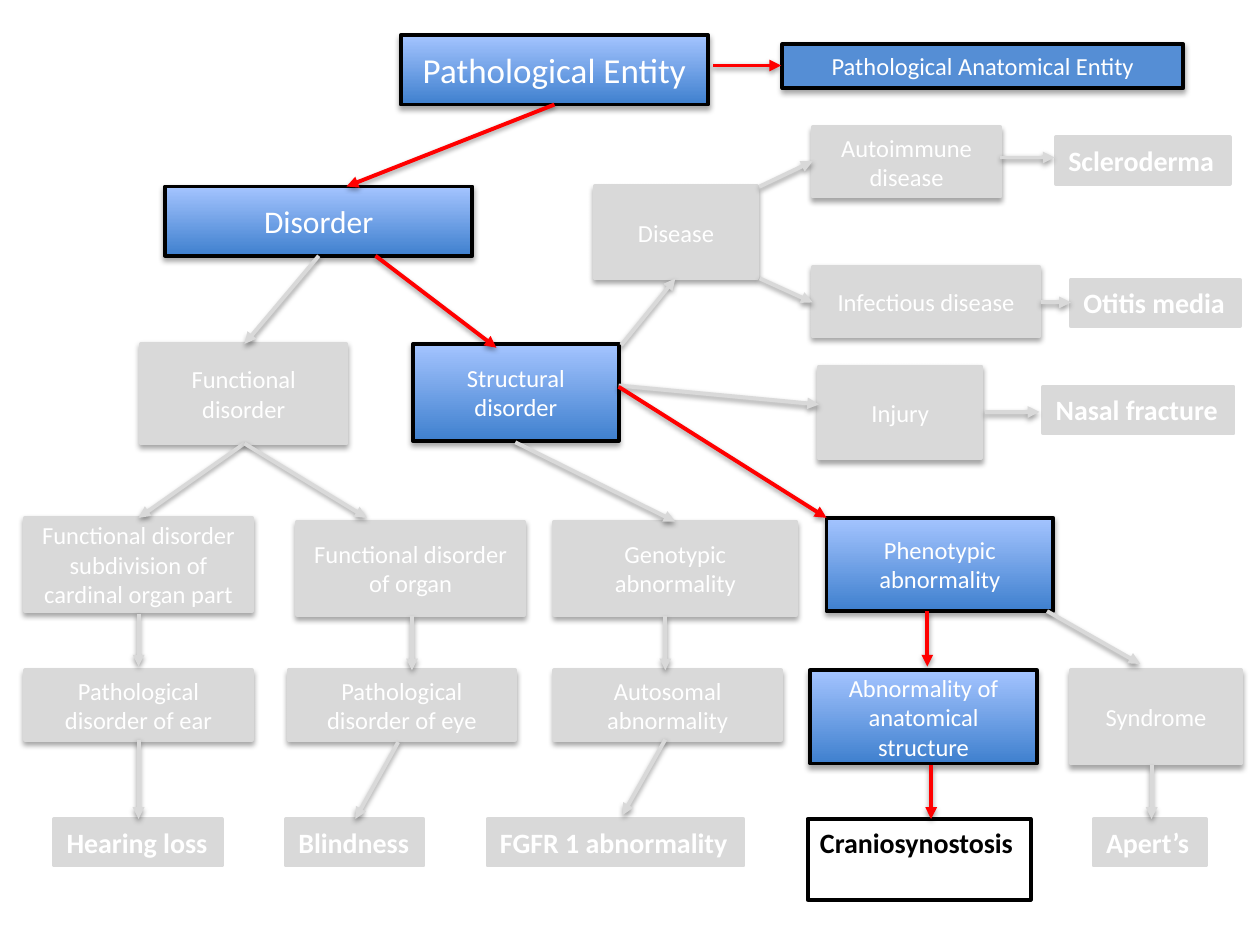
from dataclasses import dataclass

from lxml import etree
from pptx import Presentation
from pptx.dml.color import RGBColor
from pptx.enum.shapes import MSO_CONNECTOR, MSO_SHAPE
from pptx.enum.text import MSO_ANCHOR, MSO_AUTO_SIZE, PP_ALIGN
from pptx.oxml.ns import qn
from pptx.util import Inches, Pt

RECTANGLE = MSO_SHAPE.RECTANGLE
STRAIGHT = MSO_CONNECTOR.STRAIGHT
MIDDLE, TOP = MSO_ANCHOR.MIDDLE, MSO_ANCHOR.TOP
CENTER, LEFT = PP_ALIGN.CENTER, PP_ALIGN.LEFT
FIT_SHAPE, FIXED = MSO_AUTO_SIZE.SHAPE_TO_FIT_TEXT, MSO_AUTO_SIZE.NONE


@dataclass(frozen=True)
class Theme:
    font: str = "Calibri"
    white: RGBColor = RGBColor(0xFF, 0xFF, 0xFF)
    black: RGBColor = RGBColor(0, 0, 0)
    gray: RGBColor = RGBColor(0xD9, 0xD9, 0xD9)
    red: RGBColor = RGBColor(0xFF, 0, 0)
    blue: RGBColor = RGBColor(0x55, 0x8E, 0xD5)
    deep_blue: RGBColor = RGBColor(0x3F, 0x80, 0xCE)
    pale_blue: RGBColor = RGBColor(0xA4, 0xC4, 0xFF)
    root_size: int = 20
    branch_size: int = 18
    label_size: int = 16
    node_size: int = 14
    stroke: float = 2.25


theme = Theme()
deck = Presentation()
deck.slide_width, deck.slide_height = Inches(10), Inches(7.5)
page = deck.slides.add_slide(deck.slide_layouts[6])


def add_shadow(properties, distance, opacity):
    effects = properties.find(qn("a:effectLst"))
    if effects is None:
        effects = etree.SubElement(properties, qn("a:effectLst"))
    shadow = etree.SubElement(effects, qn("a:outerShdw"), blurRad=str(Pt(3.1)),
                              dist=str(Pt(distance)), dir="5400000", rotWithShape="0")
    color = etree.SubElement(shadow, qn("a:srgbClr"), val=str(theme.black))
    etree.SubElement(color, qn("a:alpha"), val=str(opacity * 1000))


def add_box(text, place, fill=theme.gray, gradient=False, outline=theme.gray,
            size=theme.node_size, color=theme.white, label=False, fit=FIXED):
    box = page.shapes.add_shape(RECTANGLE, *(Inches(value) for value in place))
    if gradient:
        box.fill.gradient()
        box.fill.gradient_angle = 90
        for stop, shade in zip(box.fill.gradient_stops, (theme.deep_blue, theme.pale_blue)):
            stop.color.rgb = shade
    elif fill is None:
        box.fill.background()
    else:
        box.fill.solid()
        box.fill.fore_color.rgb = fill
    box.line.color.rgb = outline
    box.line.width = Pt(theme.stroke)
    box.shadow.inherit = False
    if not label:
        add_shadow(box._element.spPr, 1.8, 35)
    frame = box.text_frame
    frame.word_wrap = fit == FIXED
    frame.auto_size = fit
    frame.vertical_anchor = TOP if label else MIDDLE
    para = frame.paragraphs[0]
    para.alignment = LEFT if label else CENTER
    span = para.add_run()
    span.text = text
    span.font.name = theme.font
    span.font.size = Pt(size)
    span.font.bold = label
    span.font.color.rgb = color


highlighted_nodes = [
    ("Pathological Entity", (3.18, 0.28, 2.44, 0.55), theme.root_size),
    ("Disorder", (1.31, 1.48, 2.44, 0.55), theme.branch_size),
    ("Structural disorder", (3.28, 2.73, 1.63, 0.77), theme.node_size),
    ("Phenotypic abnormality", (6.56, 4.11, 1.8, 0.74), theme.node_size),
    ("Abnormality of anatomical structure", (6.43, 5.32, 1.8, 0.74), theme.node_size),
]
for text, place, size in highlighted_nodes:
    add_box(text, place, gradient=True, outline=theme.black, size=size)

add_box("Pathological Anatomical Entity", (6.21, 0.35, 3.18, 0.35),
        fill=theme.blue, outline=theme.black)

faded_nodes = [
    ("Functional disorder", (1.12, 2.73, 1.63, 0.79)),
    ("Functional disorder subdivision of cardinal organ part", (0.2, 4.11, 1.8, 0.74)),
    ("Functional disorder of organ", (2.36, 4.14, 1.8, 0.74)),
    ("Genotypic abnormality", (4.4, 4.14, 1.92, 0.74)),
    ("Pathological disorder of ear", (0.2, 5.32, 1.8, 0.55)),
    ("Pathological disorder of eye", (2.29, 5.32, 1.8, 0.55)),
    ("Autosomal abnormality", (4.4, 5.32, 1.8, 0.55)),
    ("Syndrome", (8.5, 5.32, 1.35, 0.74)),
    ("Disease", (4.72, 1.48, 1.29, 0.73)),
    ("Autoimmune disease", (6.45, 1.01, 1.49, 0.55)),
    ("Infectious disease", (6.45, 2.12, 1.8, 0.55)),
    ("Injury", (6.5, 2.91, 1.29, 0.73)),
]
for text, place in faded_nodes:
    add_box(text, place)

examples = [
    ("Hearing loss", 0.43, 6.5, 1.33),
    ("Blindness", 2.27, 6.5, 1.09),
    ("FGFR 1 abnormality", 3.87, 6.5, 2.03),
    ("Apert’s", 8.68, 6.5, 0.89),
    ("Scleroderma", 8.38, 1.09, 1.38),
    ("Otitis media", 8.5, 2.22, 1.34),
    ("Nasal fracture", 8.28, 3.07, 1.51),
]
for text, left, top, width in examples:
    add_box(text, (left, top, width, 0.37), size=theme.label_size, label=True, fit=FIT_SHAPE)

add_box("Craniosynostosis", (6.41, 6.5, 1.77, 0.64), fill=None, outline=theme.black,
        size=theme.label_size, color=theme.black, label=True)

faded_arrows = [
    (2.53, 2.03, 1.94, 2.73),
    (1.94, 3.52, 1.1, 4.11),
    (1.94, 3.52, 2.91, 4.11),
    (4.09, 3.51, 5.36, 4.14),
    (4.93, 2.74, 5.36, 2.21),
    (4.91, 3.06, 6.5, 3.21),
    (6.03, 1.48, 6.45, 1.28),
    (6.03, 2.21, 6.45, 2.4),
    (7.94, 1.25, 8.37, 1.25),
    (8.26, 2.4, 8.5, 2.4),
    (7.82, 3.27, 8.25, 3.27),
    (1.1, 4.87, 1.1, 5.29),
    (3.27, 4.89, 3.27, 5.32),
    (5.28, 4.89, 5.28, 5.32),
    (8.31, 4.85, 9.05, 5.27),
    (1.1, 5.87, 1.1, 6.5),
    (3.16, 5.89, 2.82, 6.5),
    (5.28, 5.87, 4.94, 6.47),
    (9.14, 6.07, 9.14, 6.5),
]
highlighted_arrows = [
    (5.66, 0.52, 6.2, 0.52),
    (4.4, 0.83, 2.75, 1.48),
    (2.98, 2.03, 3.94, 2.76),
    (4.91, 3.07, 6.56, 4.11),
    (7.36, 4.85, 7.36, 5.29),
    (7.39, 6.07, 7.39, 6.5),
]
for color, arrows in ((theme.gray, faded_arrows), (theme.red, highlighted_arrows)):
    for ends in arrows:
        arrow = page.shapes.add_connector(STRAIGHT, *(Inches(value) for value in ends))
        arrow.line.color.rgb = color
        arrow.line.width = Pt(theme.stroke)
        properties = arrow._element.spPr
        etree.SubElement(properties.find(qn("a:ln")), qn("a:tailEnd"), type="triangle")
        add_shadow(properties, 1.6, 38)

deck.save("out.pptx")
